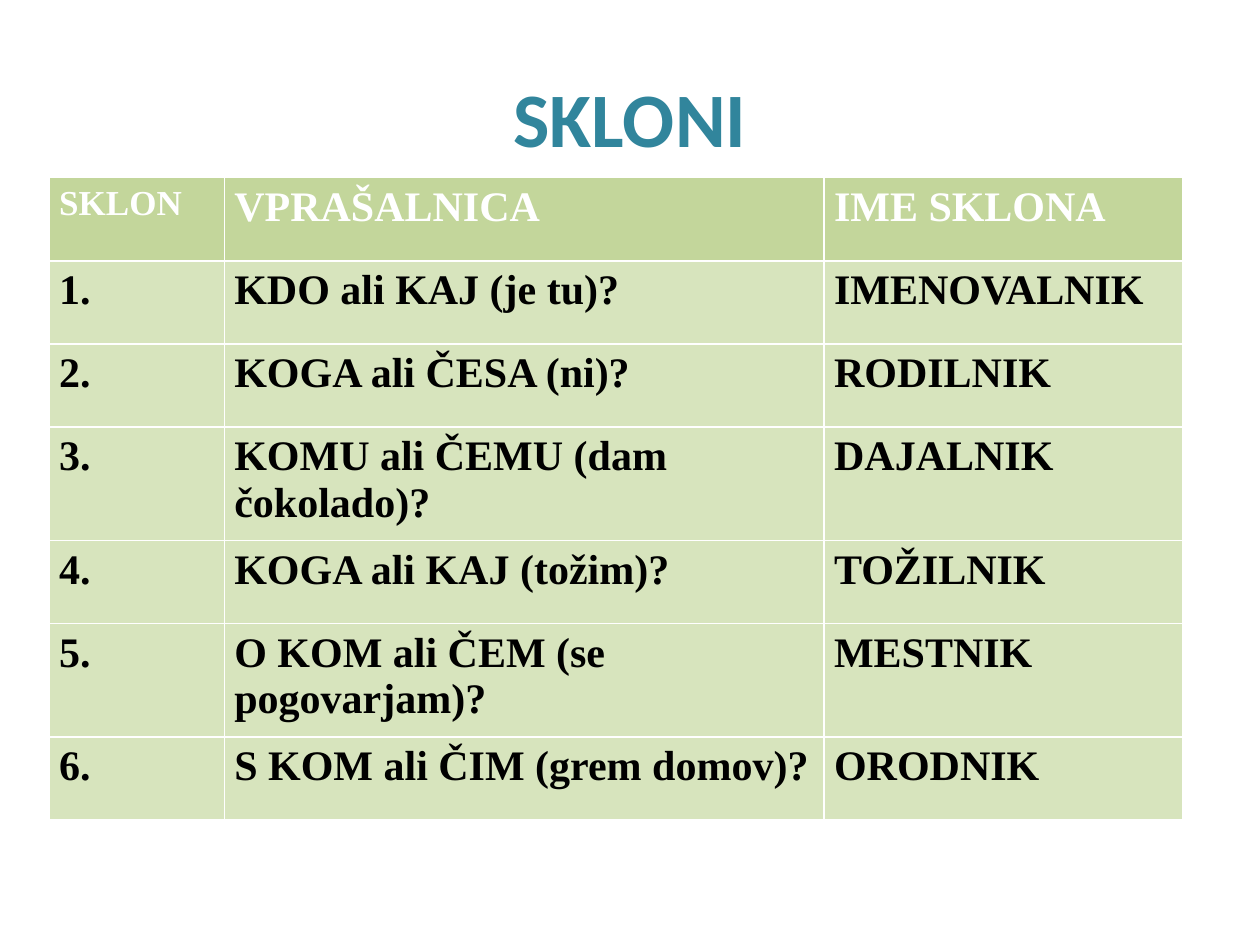
from dataclasses import dataclass

from lxml.etree import SubElement
from pptx import Presentation
from pptx.dml.color import RGBColor
from pptx.enum.text import MSO_ANCHOR, PP_ALIGN
from pptx.oxml.ns import qn
from pptx.util import Inches, Pt


@dataclass(frozen=True)
class Theme:
    """Colours, fonts and type sizes of the deck."""
    title_color: str = "31859C"
    header_fill: str = "C3D69B"
    body_fill: str = "D7E4BD"
    light: str = "FFFFFF"
    dark: str = "000000"
    title_font: str = "Calibri"
    table_font: str = "Times New Roman"
    title_size: int = 44
    label_size: int = 20
    table_size: int = 24
    border_width: int = 1


THEME = Theme()
HEADINGS = ("SKLON", "VPRAŠALNICA", "IME SKLONA")
CASES = (
    ("KDO ali KAJ (je tu)?", "IMENOVALNIK"),
    ("KOGA ali ČESA (ni)?", "RODILNIK"),
    ("KOMU ali ČEMU (dam čokolado)?", "DAJALNIK"),
    ("KOGA ali KAJ (tožim)?", "TOŽILNIK"),
    ("O KOM ali ČEM (se pogovarjam)?", "MESTNIK"),
    ("S KOM ali ČIM (grem domov)?", "ORODNIK"),
)
COLUMN_WIDTHS = (1.39, 4.76, 2.85)
ROW_HEIGHT = 0.66


def style_text(para, font_name, size, color):
    """Format every run of a paragraph in bold."""
    for span in para.runs:
        span.font.name = font_name
        span.font.size = Pt(size)
        span.font.bold = True
        span.font.color.rgb = RGBColor.from_string(color)


def add_title(page, text, left, top, width, height):
    """Place the centred title in the given box."""
    box = page.shapes.add_textbox(*map(Inches, (left, top, width, height)))
    frame = box.text_frame
    frame.word_wrap = True
    frame.vertical_anchor = MSO_ANCHOR.MIDDLE
    frame.text = text
    para = frame.paragraphs[0]
    para.alignment = PP_ALIGN.CENTER
    style_text(para, THEME.title_font, THEME.title_size, THEME.title_color)


def add_borders(cell):
    """Draw a thin line on all four sides of a cell."""
    properties = cell._tc.get_or_add_tcPr()
    for position, side in enumerate(("a:lnL", "a:lnR", "a:lnT", "a:lnB")):
        line = SubElement(properties, qn(side), w=str(Pt(THEME.border_width)))
        fill = SubElement(line, qn("a:solidFill"))
        SubElement(fill, qn("a:srgbClr"), val=THEME.light)
        properties.insert(position, line)


def fill_cell(cell, text, size, color, fill):
    """Write and style one table cell."""
    cell.text = text
    cell.margin_left = cell.margin_right = Inches(0.08)
    cell.margin_top = cell.margin_bottom = Inches(0.05)
    cell.fill.solid()
    cell.fill.fore_color.rgb = RGBColor.from_string(fill)
    style_text(cell.text_frame.paragraphs[0], THEME.table_font, size, color)
    add_borders(cell)


def add_case_table(page, left, top):
    """Place the table of numbered cases with its heading row."""
    rows = [HEADINGS] + [(f"{number}.", *case) for number, case in enumerate(CASES, 1)]
    table = page.shapes.add_table(
        len(rows), len(HEADINGS), Inches(left), Inches(top),
        Inches(sum(COLUMN_WIDTHS)), Inches(ROW_HEIGHT * len(rows)),
    ).table
    table.horz_banding = False
    for column, width in zip(table.columns, COLUMN_WIDTHS):
        column.width = Inches(width)
    for row_index, texts in enumerate(rows):
        table.rows[row_index].height = Inches(ROW_HEIGHT)
        is_header = row_index == 0
        color = THEME.light if is_header else THEME.dark
        fill = THEME.header_fill if is_header else THEME.body_fill
        for column_index, text in enumerate(texts):
            is_label = is_header and column_index == 0
            size = THEME.label_size if is_label else THEME.table_size
            fill_cell(table.cell(row_index, column_index), text, size, color, fill)


def main():
    """Build the slide on noun cases and save the deck."""
    deck = Presentation()
    deck.slide_width, deck.slide_height = Inches(10), Inches(7.5)
    page = deck.slides.add_slide(deck.slide_layouts[6])
    add_title(page, "SKLONI", 0.5, 0.3, 9, 1.25)
    add_case_table(page, 0.39, 1.41)
    deck.save("out.pptx")


if __name__ == "__main__":
    main()
